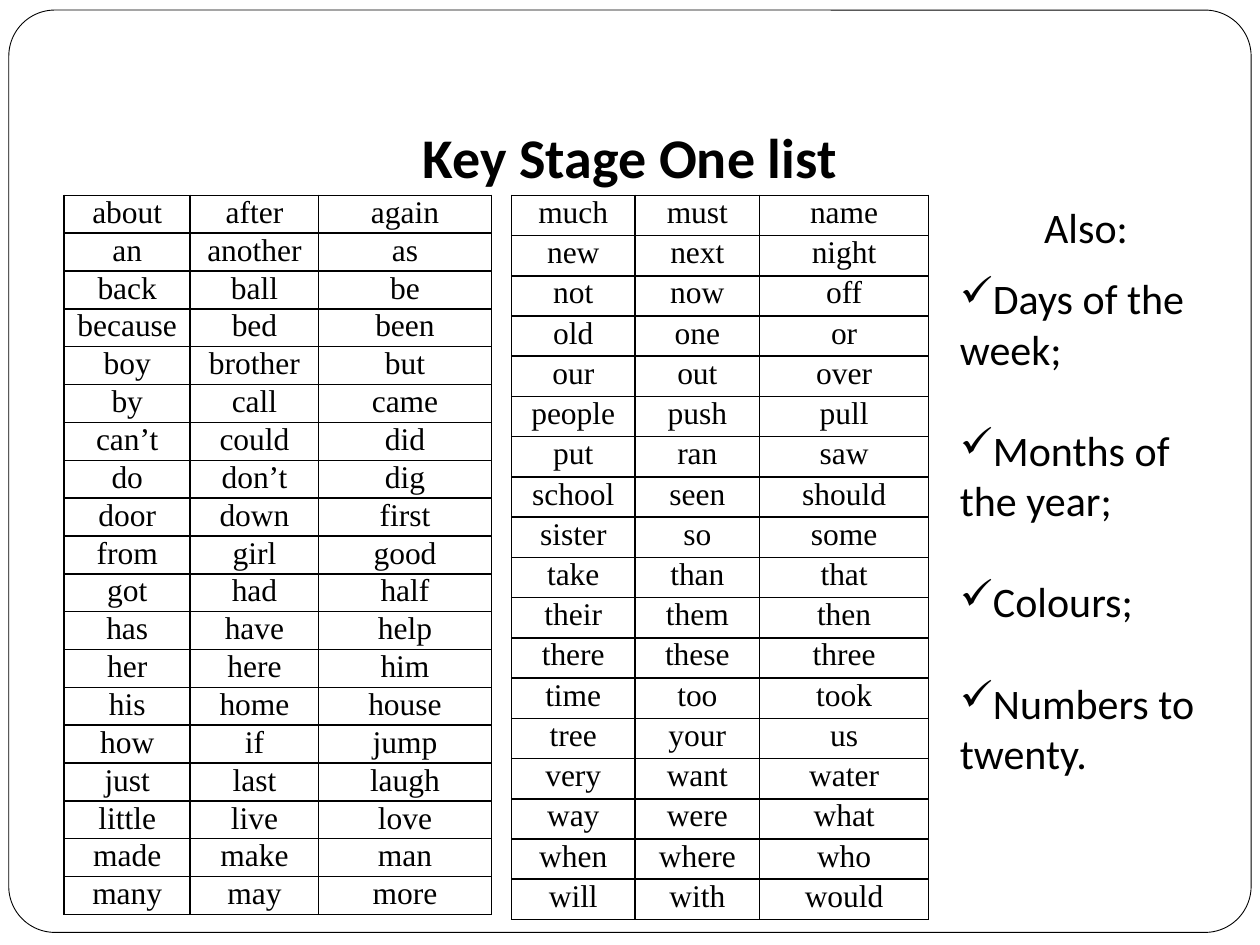
from lxml.etree import SubElement
from pptx import Presentation
from pptx.dml.color import RGBColor
from pptx.enum.shapes import MSO_SHAPE
from pptx.enum.text import MSO_ANCHOR, MSO_AUTO_SIZE, PP_ALIGN
from pptx.oxml.ns import qn
from pptx.util import Inches, Pt

BLACK = RGBColor(0x00, 0x00, 0x00)
WHITE = RGBColor(0xFF, 0xFF, 0xFF)
HEADING_FONT = "Calibri"
WORD_FONT = "Times New Roman"
SLIDE_WIDTH, SLIDE_HEIGHT = 10, 7.5
CONTENT_TOP = 1.55

WORDS_ABOUT_TO_MORE = """
about after again
an another as
back ball be
because bed been
boy brother but
by call came
can’t could did
do don’t dig
door down first
from girl good
got had half
has have help
her here him
his home house
how if jump
just last laugh
little live love
made make man
many may more
"""

WORDS_MUCH_TO_WOULD = """
much must name
new next night
not now off
old one or
our out over
people push pull
put ran saw
school seen should
sister so some
take than that
their them then
there these three
time too took
tree your us
very want water
way were what
when where who
will with would
"""

OTHER_TOPICS = ["Days of the week;", "Months of the year;", "Colours;", "Numbers to twenty."]


def format_paragraph(paragraph, size, font, bold=False, align=PP_ALIGN.CENTER):
    paragraph.alignment = align
    for run in paragraph.runs:
        run.font.size = Pt(size)
        run.font.name = font
        run.font.bold = bold
        run.font.color.rgb = BLACK


def add_frame(slide, margin=0.07):
    frame = slide.shapes.add_shape(
        MSO_SHAPE.ROUNDED_RECTANGLE, Inches(margin), Inches(margin + 0.01),
        Inches(SLIDE_WIDTH - 2 * margin), Inches(7.32))
    frame.adjustments[0] = 0.05
    frame.shadow.inherit = False
    frame.fill.solid()
    frame.fill.fore_color.rgb = WHITE
    frame.line.color.rgb = BLACK
    frame.line.width = Pt(0.5)


def set_title(slide, text, width=4.25, height=0.64):
    """Fill the title placeholder and bring it in front of the frame."""
    title = slide.shapes.title
    title.left, title.top = Inches((SLIDE_WIDTH - width) / 2), Inches(0.92)
    title.width, title.height = Inches(width), Inches(height)
    title.text_frame.text = text
    title.text_frame.word_wrap = True
    title.text_frame.auto_size = MSO_AUTO_SIZE.SHAPE_TO_FIT_TEXT
    title.text_frame.vertical_anchor = MSO_ANCHOR.TOP
    format_paragraph(title.text_frame.paragraphs[0], 32, HEADING_FONT, bold=True)
    slide.shapes.element.append(title.element)


def add_borders(cell):
    properties = cell._tc.get_or_add_tcPr()
    for side in ("a:lnL", "a:lnR", "a:lnT", "a:lnB"):
        border = SubElement(properties, qn(side), w=str(Pt(1)))
        fill = SubElement(border, qn("a:solidFill"))
        SubElement(fill, qn("a:srgbClr"), val=str(BLACK))


def add_word_table(slide, words, left, height, column_widths):
    rows = [line.split() for line in words.strip().splitlines()]
    table = slide.shapes.add_table(
        len(rows), len(column_widths), Inches(left), Inches(CONTENT_TOP),
        Inches(sum(column_widths)), Inches(height)).table
    table.first_row = table.horz_banding = False
    for column, width in zip(table.columns, column_widths):
        column.width = Inches(width)
    for row, row_words in zip(table.rows, rows):
        for cell, word in zip(row.cells, row_words):
            cell.text_frame.text = word
            format_paragraph(cell.text_frame.paragraphs[0], 18, WORD_FONT)
            cell.margin_left = cell.margin_right = Inches(0.03)
            cell.margin_top = cell.margin_bottom = 0
            add_borders(cell)
            cell.fill.background()


def add_topic_list(slide, heading, topics):
    text_frame = slide.shapes.add_textbox(
        Inches(7.52), Inches(CONTENT_TOP), Inches(2.2), Inches(4.71)).text_frame
    text_frame.word_wrap = True
    text_frame.text = heading
    format_paragraph(text_frame.paragraphs[0], 24, HEADING_FONT)
    text_frame.paragraphs[0].space_after = Pt(12)
    for topic in topics:
        paragraph = text_frame.add_paragraph()
        paragraph.text = topic
        format_paragraph(paragraph, 24, HEADING_FONT, align=PP_ALIGN.LEFT)
        if topic != topics[-1]:
            paragraph.space_after = Pt(29)
        SubElement(paragraph._p.get_or_add_pPr(), qn("a:buChar"), char="✓")


def main():
    presentation = Presentation()
    presentation.slide_width = Inches(SLIDE_WIDTH)
    presentation.slide_height = Inches(SLIDE_HEIGHT)
    slide = presentation.slides.add_slide(presentation.slide_layouts[5])
    add_frame(slide)
    set_title(slide, "Key Stage One list")
    add_word_table(slide, WORDS_ABOUT_TO_MORE, 0.51, 5.7, [1, 1.02, 1.37])
    add_word_table(slide, WORDS_MUCH_TO_WOULD, 4.06, 5.75, [0.98, 0.99, 1.34])
    add_topic_list(slide, "Also:", OTHER_TOPICS)
    presentation.save("out.pptx")


if __name__ == "__main__":
    main()
